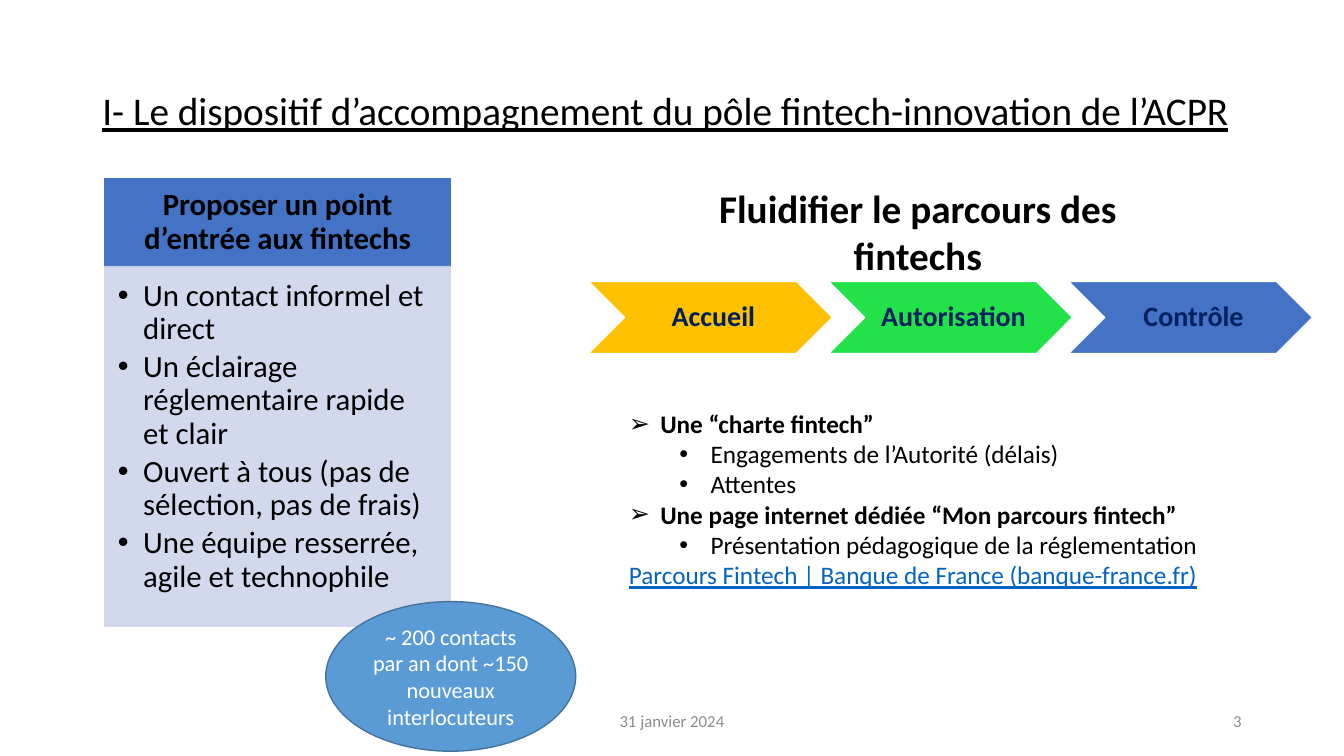
from pptx import Presentation, util as u
from pptx.dml import color
from pptx.enum import shapes, text
from pptx.oxml import ns
from lxml import etree

Kind = shapes.MSO_SHAPE
Mid, Top = text.MSO_ANCHOR.MIDDLE, text.MSO_ANCHOR.TOP
Left, Mitte, Right = text.PP_ALIGN.LEFT, text.PP_ALIGN.CENTER, text.PP_ALIGN.RIGHT


def tint(hue):
    return color.RGBColor.from_string(hue)


def write(form, lines, size, hue="000000", align=Left, anchor=Mid,
          pad=(0.25, 0.13, 0.25, 0.13), lead=1.0, after=0):
    frame = form.text_frame
    frame.word_wrap = True
    frame.vertical_anchor = anchor
    frame.margin_left, frame.margin_top, frame.margin_right, frame.margin_bottom = map(u.Cm, pad)
    for n, (words, look, mark, left, hang) in enumerate(lines):
        para = frame.paragraphs[0] if n == 0 else frame.add_paragraph()
        para.alignment = align
        para.line_spacing = lead
        para.space_after = u.Pt(after)
        if mark:
            props = para._p.get_or_add_pPr()
            props.set("marL", str(u.Cm(left)))
            props.set("indent", str(-u.Cm(hang)))
            etree.SubElement(props, ns.qn("a:buFont")).set("typeface", "Arial")
            etree.SubElement(props, ns.qn("a:buChar")).set("char", mark)
        run = para.add_run()
        run.text = words
        run.font.name = "Calibri"
        run.font.size = u.Pt(size)
        run.font.bold = "b" in look
        run.font.underline = "u" in look
        run.font.color.rgb = tint("0563C1" if "link" in look else hue)


deck = Presentation()
deck.slide_width, deck.slide_height = u.Cm(33.87), u.Cm(19.05)
slide = deck.slides.add_slide(deck.slide_layouts[6])
draw = slide.shapes

labels = [
    ("I- Le dispositif d’accompagnement du pôle fintech-innovation de l’ACPR",
     "u", 28, "000000", Left, (2.33, 1.01, 29.21, 3.68), 0.9),
    ("Fluidifier le parcours des fintechs",
     "b", 28, "000000", Mitte, (16.59, 4.5, 13.08, 2.64), 1.0),
    ("31 janvier 2024", "", 12, "8C8C8C", Mitte, (11.22, 17.66, 11.43, 1.01), 1.0),
    ("3", "", 12, "8C8C8C", Right, (23.92, 17.66, 7.62, 1.01), 1.0),
]
for words, look, size, hue, align, place, lead in labels:
    box = draw.add_textbox(*map(u.Cm, place))
    write(box, [(words, look, "", 0, 0)], size, hue, align, lead=lead)

offers = [
    "Un contact informel et direct",
    "Un éclairage réglementaire rapide et clair",
    "Ouvert à tous (pas de sélection, pas de frais)",
    "Une équipe resserrée, agile et technophile",
]
forms = [
    (Kind.RECTANGLE, (2.64, 4.5, 8.71, 2.22), "4472C4", "4472C4",
     [("Proposer un point d’entrée aux fintechs", "b", "", 0, 0)],
     dict(size=22, align=Mitte, pad=(0.43, 0.25, 0.43, 0.25), lead=0.9)),
    (Kind.RECTANGLE, (2.64, 6.72, 8.71, 9.06), "CFD5EA", "CFD5EA",
     [(offer, "", "•", 0.64, 0.64) for offer in offers],
     dict(size=22, anchor=Top, pad=(0.33, 0.33, 0.43, 0.49), lead=0.9, after=3.5)),
    (Kind.OVAL, (8.21, 15.16, 6.3, 3.77), "5B9BD5", "43739E",
     [("~ 200 contacts par an dont ~150 nouveaux interlocuteurs", "", "", 0, 0)],
     dict(size=16, hue="FFFFFF", align=Mitte)),
]
steps = [("Accueil", "FFC000"), ("Autorisation", "23E148"), ("Contrôle", "4472C4")]
for n, (step, hue) in enumerate(steps):
    forms.append((Kind.CHEVRON, (14.83 + 6.05 * n, 7.09, 6.15, 1.82), hue, "FFFFFF",
                  [(step, "b", "", 0, 0)],
                  dict(size=20, hue="002060", align=Mitte,
                       pad=(0.23, 0.08, 0.08, 0.08), lead=0.9)))

for kind, place, fill, edge, lines, style in forms:
    form = draw.add_shape(kind, *map(u.Cm, place))
    form.shadow.inherit = False
    form.fill.solid()
    form.fill.fore_color.rgb = tint(fill)
    form.line.color.rgb = tint(edge)
    form.line.width = u.Pt(1)
    if fill == "CFD5EA":
        for node in form._element.spPr.iter(ns.qn("a:srgbClr")):
            etree.SubElement(node, ns.qn("a:alpha")).set("val", "90000")
    write(form, lines, **style)

tools = [
    ("Une “charte fintech”", "b", "➢", 0.79, 0.79),
    ("Engagements de l’Autorité (délais)", "", "•", 2.06, 0.79),
    ("Attentes", "", "•", 2.06, 0.79),
    ("Une page internet dédiée “Mon parcours fintech”", "b", "➢", 0.79, 0.79),
    ("Présentation pédagogique de la réglementation", "", "•", 2.06, 0.79),
    ("Parcours Fintech | Banque de France (banque-france.fr)", ("u", "link"), "", 0, 0),
]
box = draw.add_textbox(*map(u.Cm, (15.6, 10.16, 16.05, 4.88)))
write(box, tools, 18, anchor=Top)

deck.save("out.pptx")
